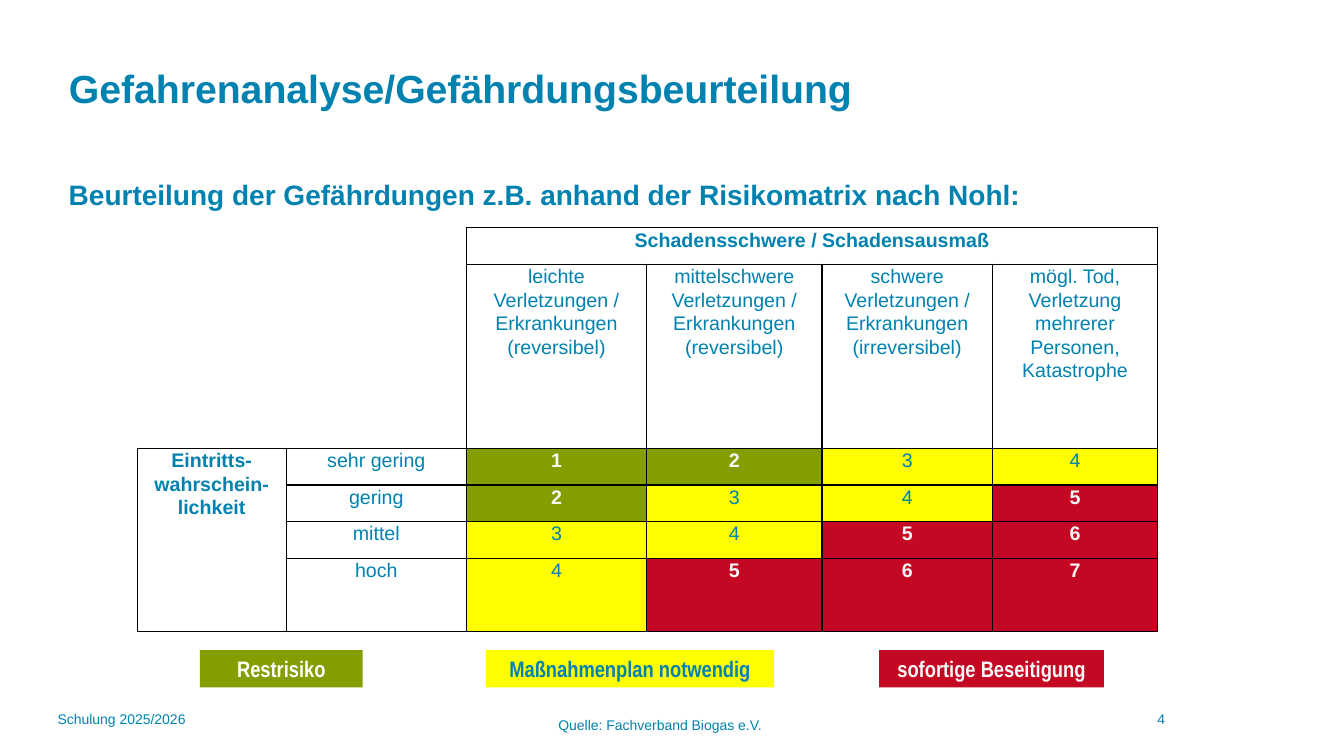
import pptx
import pptx.util
import pptx.dml.color
import pptx.enum.shapes
import pptx.enum.text
import pptx.oxml
import pptx.oxml.ns

Pt = pptx.util.Pt
ALIGN = pptx.enum.text.PP_ALIGN
ANCHOR = pptx.enum.text.MSO_ANCHOR

BLUE = "0082B0"
GREEN = "849E00"
YELLOW = "FFFF00"
RED = "C40823"
PALE = "F8F8F8"
WHITE = "FFFFFF"
BLACK = "000000"

COLUMN_WIDTHS = [106.5, 128.7, 128.7, 125.3, 121.7, 118.1]
ROW_HEIGHTS = [26.2, 131.3, 26.2, 26.2, 26.2, 52.5]
SEVERITIES = [
    "leichte\nVerletzungen /\nErkrankungen\n(reversibel)",
    "mittelschwere Verletzungen / Erkrankungen (reversibel)",
    "schwere Verletzungen / Erkrankungen (irreversibel)",
    "mögl. Tod,\nVerletzung mehrerer Personen,\nKatastrophe",
]
LIKELIHOODS = ["sehr gering", "gering", "mittel", "hoch"]
LEGEND = [
    ("Restrisiko", 142.8, 116.3, GREEN, WHITE),
    ("Maßnahmenplan notwendig", 347, 206, YELLOW, BLUE),
    ("sofortige Beseitigung", 628, 160.6, RED, PALE),
]


def rgb(color):
    return pptx.dml.color.RGBColor.from_string(color)


def write(frame, text, size, color=BLUE, bold=False, align=ALIGN.LEFT, font="Arial", spacing=None):
    frame.text = text
    for paragraph in frame.paragraphs:
        paragraph.alignment = align
        if spacing:
            paragraph.line_spacing = spacing
        for run in paragraph.runs:
            run.font.name = font
            run.font.size = Pt(size)
            run.font.bold = bold
            run.font.color.rgb = rgb(color)


def add_title(slide, text):
    title = slide.shapes.title
    title.left, title.top, title.width, title.height = Pt(42), Pt(18), Pt(620), Pt(90)
    title.text_frame.vertical_anchor = ANCHOR.MIDDLE
    write(title.text_frame, text, 28, bold=True)


def add_label(slide, text, left, top, width, height, size=10, wrap=True, **style):
    label = slide.shapes.add_textbox(Pt(left), Pt(top), Pt(width), Pt(height))
    label.text_frame.word_wrap = wrap
    write(label.text_frame, text, size, **style)


def add_legend_box(slide, text, left, width, fill, color):
    box = slide.shapes.add_shape(
        pptx.enum.shapes.MSO_SHAPE.RECTANGLE, Pt(left), Pt(464.4), Pt(width), Pt(26.6))
    box.shadow.inherit = False
    box.fill.solid()
    box.fill.fore_color.rgb = rgb(fill)
    box.line.fill.background()
    box.text_frame.vertical_anchor = ANCHOR.MIDDLE
    write(box.text_frame, text, 16, color, True, ALIGN.CENTER, "Arial Narrow")


def set_borders(cell, black_sides):
    properties = cell._tc.get_or_add_tcPr()
    for position, side in enumerate("LRTB"):
        if side in black_sides:
            paint = f'<a:solidFill><a:srgbClr val="{BLACK}"/></a:solidFill>'
        else:
            paint = "<a:noFill/>"
        border = pptx.oxml.parse_xml(
            f'<a:ln{side} {pptx.oxml.ns.nsdecls("a")} w="{Pt(1)}">{paint}</a:ln{side}>')
        properties.insert(position, border)


def fill_cell(cell, text, color=BLUE, bold=False, fill=None):
    write(cell.text_frame, text, 14, color, bold, ALIGN.CENTER, spacing=1.07)
    if fill:
        cell.fill.solid()
        cell.fill.fore_color.rgb = rgb(fill)


def risk_style(risk):
    if risk <= 2:
        return PALE, True, GREEN
    if risk <= 4:
        return BLUE, False, YELLOW
    return PALE, True, RED


def add_risk_matrix(slide):
    matrix = slide.shapes.add_table(
        len(ROW_HEIGHTS), len(COLUMN_WIDTHS), Pt(98), Pt(162.7),
        Pt(sum(COLUMN_WIDTHS)), Pt(sum(ROW_HEIGHTS))).table
    matrix.first_row = False
    matrix.horz_banding = False
    for column, width in zip(matrix.columns, COLUMN_WIDTHS):
        column.width = Pt(width)
    for row_index, height in enumerate(ROW_HEIGHTS):
        matrix.rows[row_index].height = Pt(height)
        for column_index in range(len(COLUMN_WIDTHS)):
            cell = matrix.cell(row_index, column_index)
            cell.margin_left = cell.margin_right = Pt(5)
            cell.margin_top = cell.margin_bottom = 0
            cell.fill.background()
            sides = "LRTB"
            if row_index < 2 and column_index < 2:
                sides = "R" * (column_index == 1) + "B" * (row_index == 1)
            set_borders(cell, sides)

    matrix.cell(0, 2).merge(matrix.cell(0, 5))
    matrix.cell(2, 0).merge(matrix.cell(5, 0))
    fill_cell(matrix.cell(0, 2), "Schadensschwere / Schadensausmaß", bold=True)
    fill_cell(matrix.cell(2, 0), "Eintritts-wahrschein-\nlichkeit", bold=True)
    for column_index, severity in enumerate(SEVERITIES):
        fill_cell(matrix.cell(1, column_index + 2), severity)
    for row_index, likelihood in enumerate(LIKELIHOODS):
        fill_cell(matrix.cell(row_index + 2, 1), likelihood)
        for column_index in range(len(SEVERITIES)):
            risk = row_index + column_index + 1
            fill_cell(matrix.cell(row_index + 2, column_index + 2), str(risk), *risk_style(risk))


def main():
    presentation = pptx.Presentation()
    presentation.slide_width = Pt(960)
    presentation.slide_height = Pt(540)
    slide = presentation.slides.add_slide(presentation.slide_layouts[5])

    add_title(slide, "Gefahrenanalyse/Gefährdungsbeurteilung")
    add_label(slide, "Beurteilung der Gefährdungen z.B. anhand der Risikomatrix nach Nohl:",
              42, 123.5, 880, 34, size=20, bold=True)
    add_risk_matrix(slide)
    for entry in LEGEND:
        add_legend_box(slide, *entry)
    add_label(slide, "Schulung 2025/2026", 34, 504, 234, 36)
    add_label(slide, "Quelle: Fachverband Biogas e.V.", 391.7, 508.3, 162, 19.4, wrap=False)
    add_label(slide, "4", 729.4, 504, 200, 36, align=ALIGN.CENTER)

    presentation.save("out.pptx")


if __name__ == "__main__":
    main()
